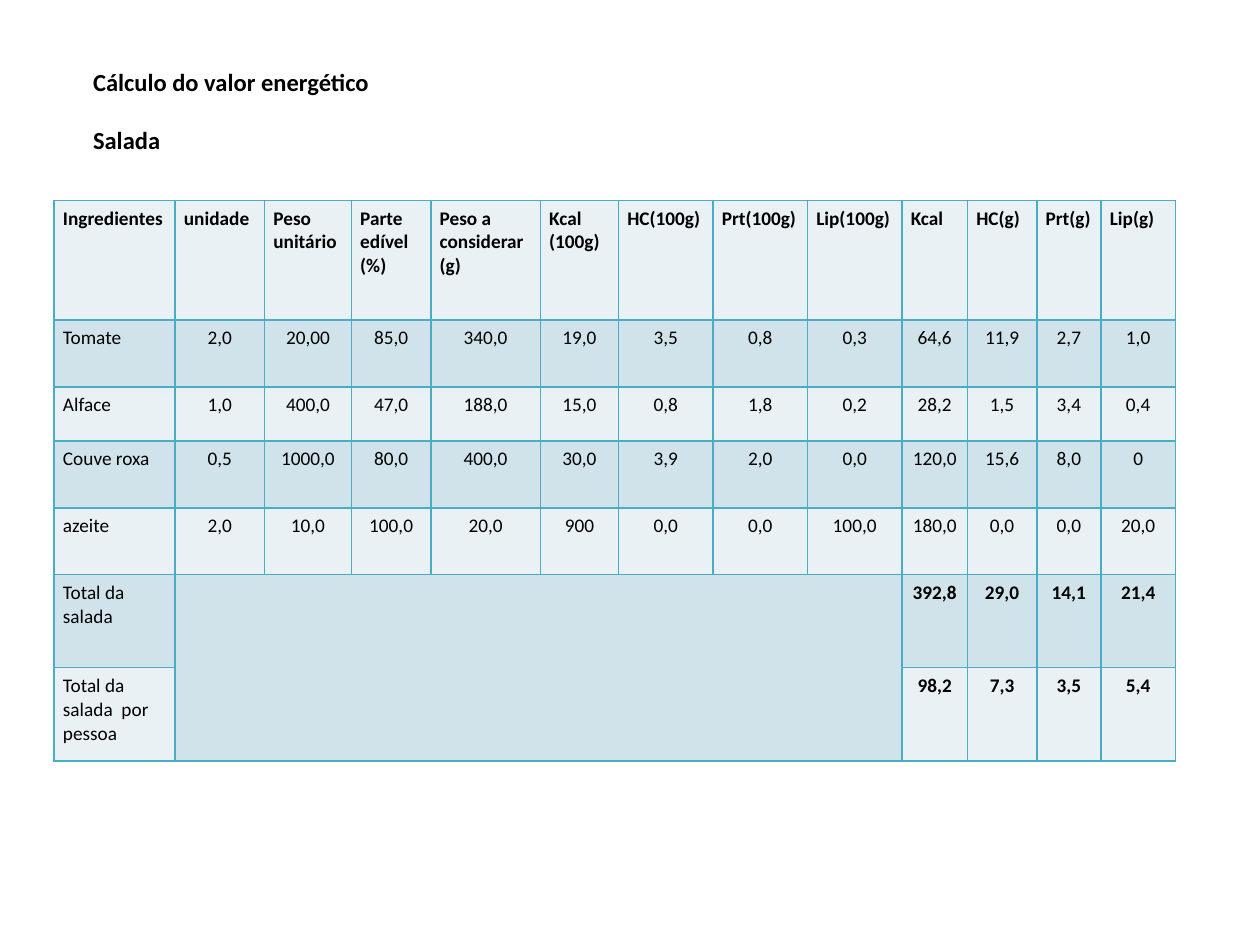
"""Build the slide with the energy value table of a salad."""
from pptx import Presentation
from pptx.dml.color import RGBColor
from pptx.enum.text import MSO_ANCHOR, PP_ALIGN
from pptx.oxml import parse_xml
from pptx.oxml.ns import nsdecls
from pptx.util import Inches, Pt

BLACK = RGBColor(0x00, 0x00, 0x00)
TEAL = RGBColor(0x4B, 0xAC, 0xC6)
LIGHT = RGBColor(0xE9, 0xF1, 0xF5)
DARK = RGBColor(0xD0, 0xE3, 0xEA)

WIDTHS = [0.96, 0.71, 0.69, 0.63, 0.87, 0.62, 0.75, 0.75, 0.75, 0.52, 0.55, 0.51, 0.59]
HEIGHTS = [0.95, 0.53, 0.43, 0.53, 0.53, 0.74, 0.74]
BLANK = [""] * 8
ROWS = [
    ["Ingredientes", "unidade", "Peso unitário", "Parte edível (%)",
     "Peso a considerar (g)", "Kcal (100g)", "HC(100g)", "Prt(100g)",
     "Lip(100g)", "Kcal", "HC(g)", "Prt(g)", "Lip(g)"],
    ["Tomate", "2,0", "20,00", "85,0", "340,0", "19,0", "3,5", "0,8", "0,3",
     "64,6", "11,9", "2,7", "1,0"],
    ["Alface", "1,0", "400,0", "47,0", "188,0", "15,0", "0,8", "1,8", "0,2",
     "28,2", "1,5", "3,4", "0,4"],
    ["Couve roxa", "0,5", "1000,0", "80,0", "400,0", "30,0", "3,9", "2,0", "0,0",
     "120,0", "15,6", "8,0", "0"],
    ["azeite", "2,0", "10,0", "100,0", "20,0", "900", "0,0", "0,0", "100,0",
     "180,0", "0,0", "0,0", "20,0"],
    ["Total da salada", *BLANK, "392,8", "29,0", "14,1", "21,4"],
    ["Total da salada  por pessoa", *BLANK, "98,2", "7,3", "3,5", "5,4"],
]
INSETS = {
    "margin_left": Inches(0.07), "margin_right": Inches(0.07),
    "margin_top": Inches(0.05), "margin_bottom": Inches(0.05),
}


def write(para, text, size, bold):
    run = para.add_run()
    run.text = text
    run.font.color.rgb = BLACK
    for key, val in {"name": "Calibri", "size": Pt(size), "bold": bold}.items():
        setattr(run.font, key, val)


def frame(cell):
    props = cell._tc.get_or_add_tcPr()
    for side in "LRTB":
        props.append(parse_xml(
            f'<a:ln{side} {nsdecls("a")} w="{Pt(1)}"><a:solidFill>'
            f'<a:srgbClr val="{TEAL}"/></a:solidFill></a:ln{side}>'))


deck = Presentation()
deck.slide_width, deck.slide_height = Inches(10), Inches(7.5)
slide = deck.slides.add_slide(deck.slide_layouts[6])

title = slide.shapes.add_textbox(Inches(0.64), Inches(0.35), Inches(8.62), Inches(1.06))
body = title.text_frame
for key, val in {"word_wrap": True, "vertical_anchor": MSO_ANCHOR.MIDDLE}.items():
    setattr(body, key, val)
write(body.paragraphs[0], "Cálculo do valor energético", 14, True)
last = body.add_paragraph()
last.space_before = Pt(16)
write(last, "Salada", 14, True)

table = slide.shapes.add_table(
    len(ROWS), len(WIDTHS), Inches(0.43), Inches(1.59),
    Inches(sum(WIDTHS)), Inches(sum(HEIGHTS))).table
for key in ("first_row", "horz_banding"):
    setattr(table, key, False)
for col, width in zip(table.columns, WIDTHS):
    col.width = Inches(width)
for row, height in zip(table.rows, HEIGHTS):
    row.height = Inches(height)
table.cell(5, 1).merge(table.cell(6, 8))

for r, row in enumerate(ROWS):
    for c, text in enumerate(row):
        cell = table.cell(r, c)
        frame(cell)
        cell.fill.solid()
        cell.fill.fore_color.rgb = DARK if r % 2 else LIGHT
        for key, val in INSETS.items():
            setattr(cell, key, val)
        if text:
            para = cell.text_frame.paragraphs[0]
            para.alignment = PP_ALIGN.CENTER if r and c else PP_ALIGN.LEFT
            write(para, text, 11, r == 0 or (r > 4 and c > 0))

deck.save("out.pptx")
